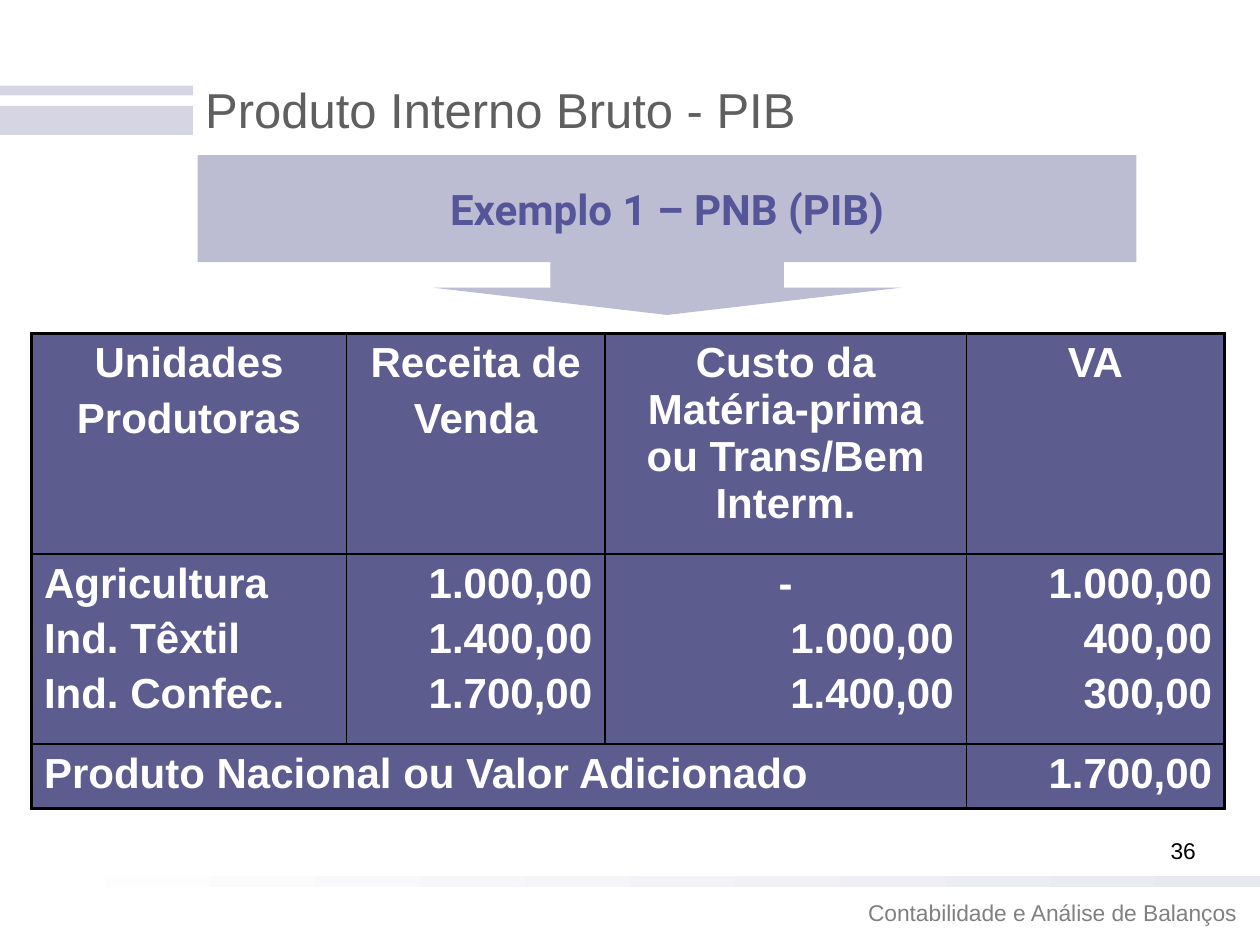
"""Build the slide on gross domestic product with its value-added table."""
from lxml import etree
from pptx import Presentation
from pptx import util as u
from pptx.dml.color import RGBColor
from pptx.enum import shapes, text
from pptx.oxml import ns

Pt = u.Pt
LEFT, CENTER, RIGHT, JUSTIFY = (
    text.PP_ALIGN.LEFT, text.PP_ALIGN.CENTER, text.PP_ALIGN.RIGHT, text.PP_ALIGN.JUSTIFY)
TOP, MIDDLE = text.MSO_ANCHOR.TOP, text.MSO_ANCHOR.MIDDLE

WHITE = RGBColor(0xFF, 0xFF, 0xFF)
BLACK = RGBColor(0, 0, 0)
GRAY = RGBColor(0x80, 0x80, 0x80)
DARK_GRAY = RGBColor(0x5F, 0x5F, 0x5F)
STRIPE = RGBColor(0xD5, 0xD5, 0xE3)
PALE = RGBColor(0xE8, 0xE8, 0xF0)
CALLOUT = RGBColor(0xBC, 0xBC, 0xD2)
VIOLET = RGBColor(0x55, 0x55, 0x99)
CELL = RGBColor(0x5C, 0x5C, 0x8E)

STRIPES = [(0, 60.5, 110.2, 16.6), (0, 49, 110.2, 5.5)]
LABELS = [
    ("Contabilidade e Análise de Balanços", (337.7, 509.8, 375.8, 23),
     dict(size=13, color=GRAY, align=RIGHT)),
    ("36", (646.6, 474.5, 59, 36), dict(size=13, color=BLACK, align=CENTER)),
    ("Produto Interno Bruto - PIB", (110.2, 17.3, 612, 90),
     dict(size=28, color=DARK_GRAY, anchor=MIDDLE)),
]
TABLE_AT = (18, 190.6)
COLUMNS = [180, 147.6, 206.6, 147.6]
ROWS = [126, 108.7, 36.7]
CELLS = [
    [(["Unidades", "Produtoras"], CENTER), (["Receita de", "Venda"], CENTER),
     (["Custo da Matéria-prima ou Trans/Bem Interm."], CENTER), (["VA"], CENTER)],
    [(["Agricultura", "Ind. Têxtil", "Ind. Confec."], JUSTIFY),
     (["1.000,00", "1.400,00", "1.700,00"], RIGHT),
     (["-", "1.000,00", "1.400,00"], RIGHT),
     (["1.000,00", "400,00", "300,00"], RIGHT)],
    [(["Produto Nacional ou Valor Adicionado"], LEFT), None, None, (["1.700,00"], RIGHT)],
]


def write(frame, lines, size=24, color=WHITE, font="Arial", bold=False,
          align=LEFT, anchor=TOP, gap=0, wrap=True):
    frame.word_wrap = wrap
    frame.vertical_anchor = anchor
    for index, line in enumerate(lines):
        para = frame.add_paragraph() if index else frame.paragraphs[0]
        para.alignment = CENTER if line == "-" else align
        para.space_before = Pt(gap if index else 0)
        span = para.add_run()
        span.text = line
        span.font.size = Pt(size)
        span.font.name = font
        span.font.bold = bold
        span.font.color.rgb = color


def add_block(page, kind, place, color):
    box = page.shapes.add_shape(kind, *map(Pt, place))
    box.shadow.inherit = False
    box.line.fill.background()
    box.fill.solid()
    box.fill.fore_color.rgb = color
    return box


def set_borders(cell, widths):
    props = cell._tc.get_or_add_tcPr()
    for index, (side, width) in enumerate(widths.items()):
        line = etree.Element(ns.qn("a:ln" + side), w=str(Pt(width)))
        fill = etree.SubElement(line, ns.qn("a:solidFill"))
        etree.SubElement(fill, ns.qn("a:srgbClr"), val=str(BLACK))
        props.insert(index, line)


def add_table(page):
    frame = page.shapes.add_table(len(ROWS), len(COLUMNS), *map(
        Pt, (*TABLE_AT, sum(COLUMNS), sum(ROWS))))
    table = frame.table
    for column, width in zip(table.columns, COLUMNS):
        column.width = Pt(width)
    for row, height in zip(table.rows, ROWS):
        row.height = Pt(height)
    table.cell(2, 0).merge(table.cell(2, 2))
    last_row, last_column = len(ROWS) - 1, len(COLUMNS) - 1
    for r, row in enumerate(CELLS):
        for c, content in enumerate(row):
            cell = table.cell(r, c)
            cell.fill.solid()
            cell.fill.fore_color.rgb = CELL
            outer = {"L": c == 0, "R": c == last_column, "T": r == 0, "B": r == last_row}
            set_borders(cell, {side: 2.25 if edge else 1 for side, edge in outer.items()})
            if content:
                lines, align = content
                write(cell.text_frame, lines, bold=True, align=align, gap=4.8)


def main():
    deck = Presentation()
    deck.slide_width, deck.slide_height = Pt(720), Pt(540)
    page = deck.slides.add_slide(deck.slide_layouts[6])
    for place in STRIPES:
        add_block(page, shapes.MSO_SHAPE.RECTANGLE, place, STRIPE)
    band = add_block(page, shapes.MSO_SHAPE.RECTANGLE, (0, 500.4, 720, 6.5), PALE)
    band.fill.gradient()
    band.fill.gradient_angle = 0
    for stop, color in zip(band.fill.gradient_stops, (WHITE, PALE)):
        stop.color.rgb = color
    for label, place, style in LABELS:
        box = page.shapes.add_textbox(*map(Pt, place))
        write(box.text_frame, [label], **style)
    add_table(page)
    callout = add_block(page, shapes.MSO_SHAPE.DOWN_ARROW_CALLOUT,
                        (113, 88.6, 536.4, 91.4), CALLOUT)
    for index, value in enumerate((1.46, 1.46, 0.17, 0.67)):
        callout.adjustments[index] = value
    write(callout.text_frame, ["Exemplo 1 – PNB (PIB)"], color=VIOLET, font="Roboto",
          bold=True, align=CENTER, anchor=MIDDLE, wrap=False)
    deck.save("out.pptx")


if __name__ == "__main__":
    main()
